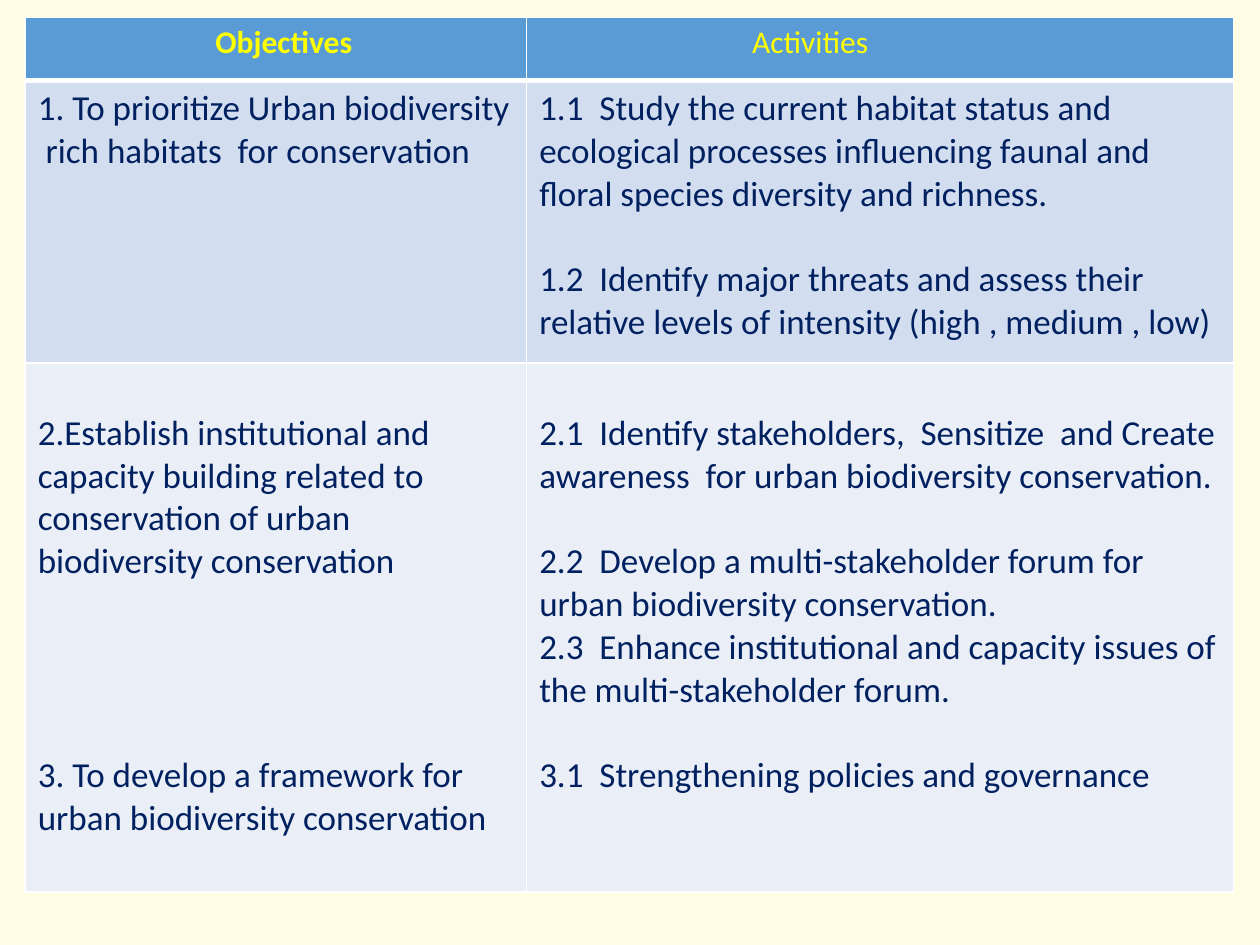
import pptx
import pptx.util
import pptx.dml.color
import pptx.oxml
import pptx.oxml.ns

Inches, Pt = pptx.util.Inches, pptx.util.Pt

HUES = {"page": "FFFEE5", "head": "5B9BD5", "odd": "D2DEEF", "even": "EAEFF7",
        "title": "FFFF00", "ink": "002060", "rule": "FFFFFF"}
LINE = 24.4  # height in points of one 20 pt line
TOP = 0.05   # usual top margin of a cell, in inches

HEADS = [("Objectives", True, 1.51), ("Activities", False, 1.79)]

# Each paragraph is (blank lines above it, text).
ROWS = [
    ("odd", [
        [(0, "1. To prioritize Urban biodiversity  rich habitats  for conservation")],
        [(0, "1.1  Study the current habitat status and ecological processes "
             "influencing faunal and floral species diversity and richness."),
         (1, "1.2  Identify major threats and assess their relative levels of "
             "intensity (high , medium , low)")],
    ]),
    ("even", [
        [(1, "2.Establish institutional and capacity building related to "
             "conservation of urban biodiversity conservation"),
         (4, "3. To develop a framework for urban biodiversity conservation")],
        [(1, "2.1  Identify stakeholders,  Sensitize  and Create awareness  "
             "for urban biodiversity conservation."),
         (1, "2.2  Develop a multi-stakeholder forum for urban biodiversity "
             "conservation."),
         (0, "2.3  Enhance institutional and capacity issues of the "
             "multi-stakeholder forum."),
         (1, "3.1  Strengthening policies and governance")],
    ]),
]


class Deck:
    def __init__(self, font):
        self.font = font
        self.prs = pptx.Presentation()
        self.prs.slide_width, self.prs.slide_height = Inches(10), Inches(7.5)
        self.slide = self.prs.slides.add_slide(self.prs.slide_layouts[6])
        self.paint(self.slide.background.fill, "page")

    def paint(self, fill, hue):
        fill.solid()
        fill.fore_color.rgb = pptx.dml.color.RGBColor.from_string(HUES[hue])

    def table(self, left, top, cols, rows):
        frame = self.slide.shapes.add_table(
            len(rows), len(cols), Inches(left), Inches(top),
            Inches(sum(cols)), Inches(sum(rows)))
        for col, width in zip(frame.table.columns, cols):
            col.width = Inches(width)
        for row, height in zip(frame.table.rows, rows):
            row.height = Inches(height)
        return frame.table

    def rule(self, cell, **widths):
        """Draw cell borders; widths are points by side: L, R, T, B."""
        props = cell._tc.get_or_add_tcPr()
        for spot, (side, width) in enumerate(widths.items()):
            props.insert(spot, pptx.oxml.parse_xml(
                f'<a:ln{side} {pptx.oxml.ns.nsdecls("a")} w="{Pt(width)}">'
                f'<a:solidFill><a:srgbClr val="{HUES["rule"]}"/></a:solidFill>'
                f'</a:ln{side}>'))

    def cell(self, cell, paras, fill, hue, size, bold=False, base=1, top=1):
        self.paint(cell.fill, fill)
        self.rule(cell, L=1, R=1, T=top, B=base)
        cell.margin_top = Inches(TOP) + Pt(paras[0][0] * LINE)
        for spot, (gap, text) in enumerate(paras):
            para = cell.text_frame.paragraphs[0] if spot == 0 else cell.text_frame.add_paragraph()
            para.text = text
            if spot and gap:
                para.space_before = Pt(gap * LINE)
            font = para.font
            font.name, font.size, font.bold = self.font, Pt(size), bold
            font.color.rgb = pptx.dml.color.RGBColor.from_string(HUES[hue])


def main():
    deck = Deck("Calibri")
    grid = deck.table(0.2, 0.14, [3.98, 5.61], [0.5, 2.24, 4.2])
    for col, (text, bold, inset) in enumerate(HEADS):
        cell = grid.cell(0, col)
        deck.cell(cell, [(0, text)], "head", "title", 18, bold, base=3)
        cell.margin_left = Inches(inset)
    for row, (fill, cells) in enumerate(ROWS, 1):
        for col, paras in enumerate(cells):
            deck.cell(grid.cell(row, col), paras, fill, "ink", 20,
                      top=3 if row == 1 else 1)
    deck.prs.save("out.pptx")


if __name__ == "__main__":
    main()
